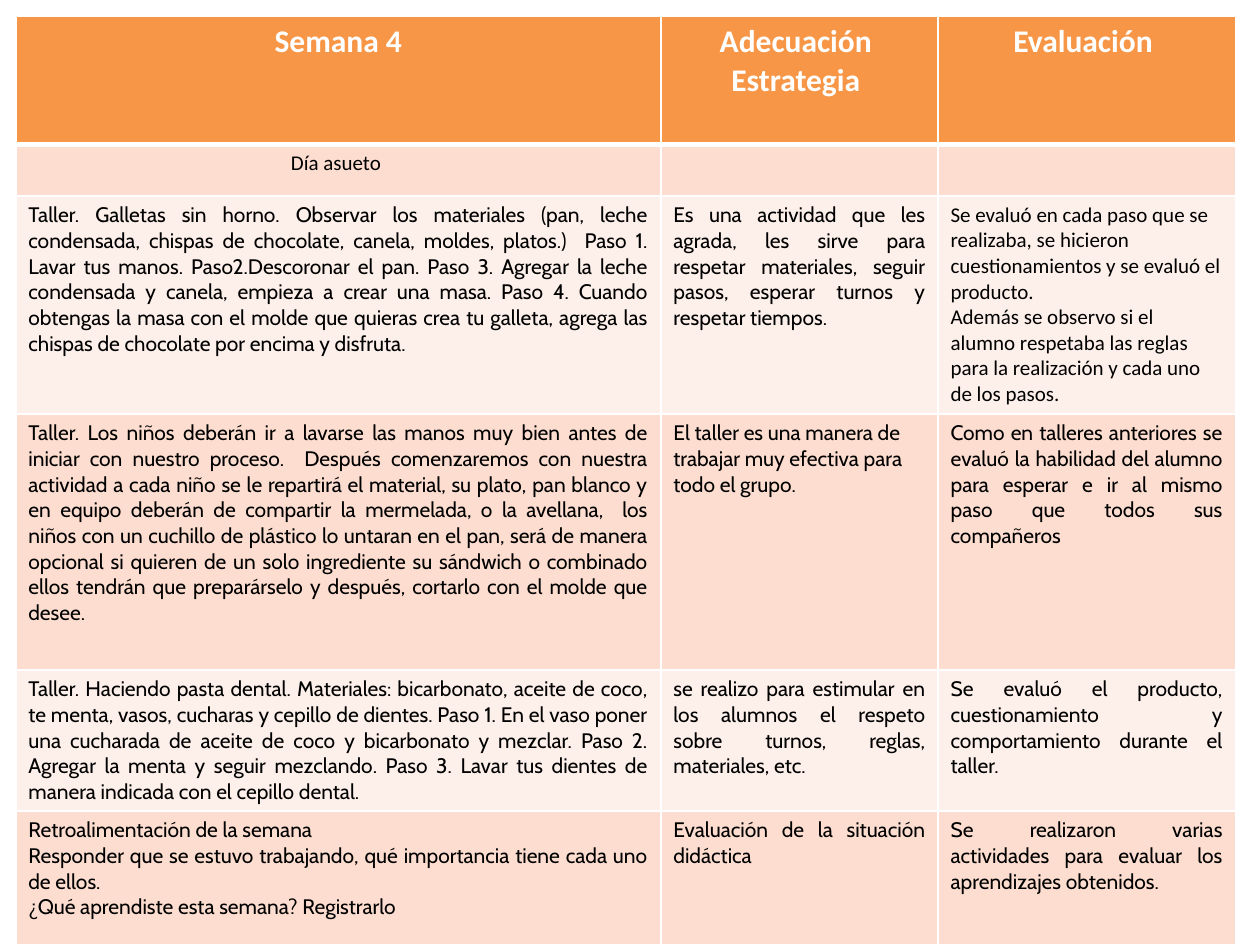
from lxml import etree
from pptx import Presentation
from pptx.dml.color import RGBColor
from pptx.enum.text import PP_ALIGN
from pptx.oxml.ns import qn
from pptx.util import Pt

LEFT, CENTER, JUSTIFY = PP_ALIGN.LEFT, PP_ALIGN.CENTER, PP_ALIGN.JUSTIFY
ORANGE = RGBColor(0xF7, 0x96, 0x46)
PEACH = RGBColor(0xFC, 0xDD, 0xCF)
CREAM = RGBColor(0xFD, 0xEF, 0xE9)
WHITE = RGBColor(0xFF, 0xFF, 0xFF)
BLACK = RGBColor(0, 0, 0)

COLUMN_WIDTHS = [368.6, 158.4, 169.9]
ROW_HEIGHTS = [73.4, 29.4, 124.6, 146.3, 80.5, 76.6]

HEADINGS = [["Semana 4"], ["Adecuación ", "Estrategia "], ["Evaluación "]]
HOLIDAY = ["Día asueto "]
ACTIVITIES = [
    [
        (["Taller. Galletas sin horno. Observar los materiales (pan, leche condensada, "
          "chispas de chocolate, canela, moldes, platos.)  Paso 1. Lavar tus manos. "
          "Paso2.Descoronar el pan. Paso 3. Agregar la leche condensada y canela, "
          "empieza a crear una masa. Paso 4. Cuando obtengas la masa con el molde que "
          "quieras crea tu galleta, agrega las chispas de chocolate por encima y "
          "disfruta. "], "Cabin", JUSTIFY),
        (["Es una actividad que les agrada, les sirve para respetar materiales, seguir "
          "pasos, esperar turnos y respetar tiempos."], "Cabin", JUSTIFY),
        (["Se evaluó en cada paso que se realizaba, se hicieron cuestionamientos y se "
          "evaluó el producto.",
          "Además se observo si el alumno respetaba las reglas para la realización y "
          "cada uno de los pasos."], "Calibri", LEFT),
    ],
    [
        (["Taller. Los niños deberán ir a lavarse las manos muy bien antes de iniciar "
          "con nuestro proceso.  Después comenzaremos con nuestra actividad a cada niño "
          "se le repartirá el material, su plato, pan blanco y en equipo deberán de "
          "compartir la mermelada, o la avellana,  los niños con un cuchillo de plástico "
          "lo untaran en el pan, será de manera opcional si quieren de un solo "
          "ingrediente su sándwich o combinado ellos tendrán que preparárselo y después, "
          "cortarlo con el molde que desee. "], "Cabin", JUSTIFY),
        (["El taller es una manera de trabajar muy efectiva para todo el grupo."],
         "Cabin", LEFT),
        (["Como en talleres anteriores se evaluó la habilidad del alumno para esperar e "
          "ir al mismo paso que todos sus compañeros "], "Cabin", JUSTIFY),
    ],
    [
        (["Taller. Haciendo pasta dental. Materiales: bicarbonato, aceite de coco, te "
          "menta, vasos, cucharas y cepillo de dientes. Paso 1. En el vaso poner una "
          "cucharada de aceite de coco y bicarbonato y mezclar. Paso 2. Agregar la menta "
          "y seguir mezclando. Paso 3. Lavar tus dientes de manera indicada con el "
          "cepillo dental. "], "Cabin", JUSTIFY),
        (["se realizo para estimular en los alumnos el respeto sobre turnos, reglas, "
          "materiales, etc. "], "Cabin", JUSTIFY),
        (["Se evaluó el producto, cuestionamiento y comportamiento durante el taller."],
         "Cabin", JUSTIFY),
    ],
    [
        (["Retroalimentación de la semana ",
          "Responder que se estuvo trabajando, qué importancia tiene cada uno de ellos.",
          "¿Qué aprendiste esta semana? Registrarlo "], "Cabin", JUSTIFY),
        (["Evaluación de la situación didáctica "], "Cabin", JUSTIFY),
        (["Se realizaron varias actividades para evaluar los aprendizajes obtenidos."],
         "Cabin", JUSTIFY),
    ],
]


def set_borders(cell, top, bottom):
    properties = cell._tc.get_or_add_tcPr()
    for side, width in (("L", 1), ("R", 1), ("T", top), ("B", bottom)):
        border = etree.SubElement(properties, qn(f"a:ln{side}"), w=str(Pt(width)))
        paint = etree.SubElement(border, qn("a:solidFill"))
        etree.SubElement(paint, qn("a:srgbClr"), val=str(WHITE))


def paint_rows(schedule):
    for row_index, row in enumerate(schedule.rows):
        if row_index == 0:
            shade = ORANGE
        else:
            shade = PEACH if row_index % 2 else CREAM
        for cell in row.cells:
            set_borders(cell, 3 if row_index == 1 else 1, 3 if row_index == 0 else 1)
            cell.fill.solid()
            cell.fill.fore_color.rgb = shade


def write_cell(cell, lines, typeface, alignment, size=12, color=BLACK, bold=False):
    frame = cell.text_frame
    for index, line in enumerate(lines):
        paragraph = frame.add_paragraph() if index else frame.paragraphs[0]
        paragraph.alignment = alignment
        run = paragraph.add_run()
        run.text = line
        run.font.name = typeface
        run.font.size = Pt(size)
        run.font.bold = bold
        run.font.color.rgb = color


def add_schedule(slide):
    frame = slide.shapes.add_table(
        len(ROW_HEIGHTS), len(COLUMN_WIDTHS), Pt(9), Pt(9.3),
        Pt(sum(COLUMN_WIDTHS)), Pt(sum(ROW_HEIGHTS)))
    schedule = frame.table
    for column, width in zip(schedule.columns, COLUMN_WIDTHS):
        column.width = Pt(width)
    for row, height in zip(schedule.rows, ROW_HEIGHTS):
        row.height = Pt(height)
    paint_rows(schedule)
    return schedule


def main():
    presentation = Presentation()
    presentation.slide_width = Pt(720)
    presentation.slide_height = Pt(540)
    slide = presentation.slides.add_slide(presentation.slide_layouts[6])
    schedule = add_schedule(slide)
    for column, heading in enumerate(HEADINGS):
        write_cell(schedule.cell(0, column), heading, "Calibri", CENTER, 18, WHITE, True)
    write_cell(schedule.cell(1, 0), HOLIDAY, "Calibri", CENTER)
    for row, activity in enumerate(ACTIVITIES, start=2):
        for column, (lines, typeface, alignment) in enumerate(activity):
            write_cell(schedule.cell(row, column), lines, typeface, alignment)
    presentation.save("out.pptx")


if __name__ == "__main__":
    main()
